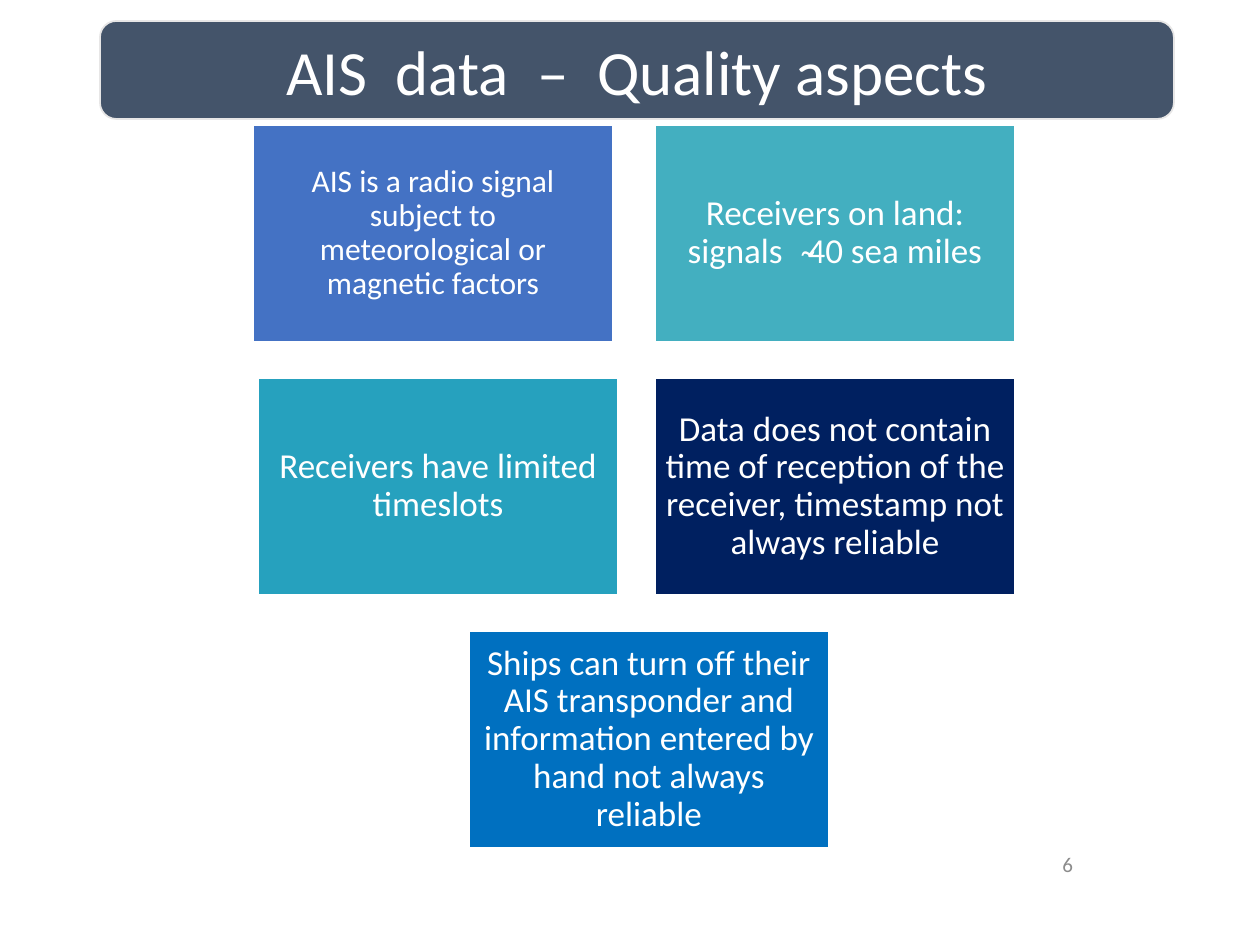
from pptx import Presentation, util as u
from pptx.dml.color import RGBColor
from pptx.enum import shapes, text

WHITE = RGBColor(0xFF, 0xFF, 0xFF)
GREY = RGBColor(0x8C, 0x8C, 0x8C)
SLATE = RGBColor(0x44, 0x54, 0x6A)
SILVER = RGBColor(0xE7, 0xE6, 0xE6)
BLUE = RGBColor(0x44, 0x72, 0xC4)
AQUA = RGBColor(0x43, 0xAF, 0xC0)
TEAL = RGBColor(0x26, 0xA1, 0xBE)
NAVY = RGBColor(0x00, 0x20, 0x60)
AZURE = RGBColor(0x00, 0x70, 0xC0)

SCALE = 914400 / 126
TILE_WIDTH, TILE_HEIGHT = 360, 217
TOP, ROW_STEP = 125, 253
ASPECTS = [
    (253, 0, BLUE, 18, 19, "AIS is a radio signal subject to meteorological or magnetic factors"),
    (655, 0, AQUA, 20, 10, "Receivers on land: signals   ̴40 sea miles"),
    (258, 1, TEAL, 20, 10, "Receivers have limited timeslots"),
    (655, 1, NAVY, 20, 10, "Data does not contain time of reception of the receiver, "
                           "timestamp not always reliable"),
    (469, 2, AZURE, 20, 10, "Ships can turn off their AIS transponder and information "
                            "entered by hand not always reliable"),
]


def px(length):
    return u.Emu(round(length * SCALE))


def assign(target, values):
    for name, value in values.items():
        setattr(target, name, value)


class QualitySlide:
    """Holds the text style and the slide that its elements are added to."""

    font = "Calibri"

    def __init__(self, deck):
        self.page = deck.slides.add_slide(deck.slide_layouts[6])

    def label(self, box, words, size, color, align, inset, spacing):
        frame = box.text_frame
        assign(frame, {"word_wrap": True, "vertical_anchor": text.MSO_ANCHOR.MIDDLE})
        assign(frame, {f"margin_{side}": px(inset) for side in ("left", "top", "right", "bottom")})
        para = frame.paragraphs[0]
        assign(para, {"alignment": align, "line_spacing": spacing})
        span = para.add_run()
        span.text = words
        assign(span.font, {"name": self.font, "size": u.Pt(size)})
        span.font.color.rgb = color

    def panel(self, kind, place, fill, line, weight, words, size, inset, spacing=1.0):
        box = self.page.shapes.add_shape(kind, *map(px, place))
        box.shadow.inherit = False
        box.fill.solid()
        box.fill.fore_color.rgb = fill
        box.line.color.rgb = line
        box.line.width = u.Pt(weight)
        self.label(box, words, size, WHITE, text.PP_ALIGN.CENTER, inset, spacing)

    def title(self, words):
        self.panel(shapes.MSO_SHAPE.ROUNDED_RECTANGLE, (100, 21, 1074, 98),
                   SLATE, SILVER, 1, words, 36, 19)

    def tile(self, left, row, fill, size, inset, words):
        place = (left, TOP + row * ROW_STEP, TILE_WIDTH, TILE_HEIGHT)
        self.panel(shapes.MSO_SHAPE.RECTANGLE, place, fill, WHITE, 1.5, words, size, inset, 0.9)

    def number(self, words):
        box = self.page.shapes.add_textbox(*map(px, (1007, 835, 78, 59)))
        self.label(box, words, 12, GREY, text.PP_ALIGN.RIGHT, 12, 1.0)


def main():
    deck = Presentation()
    assign(deck, {"slide_width": u.Inches(10), "slide_height": u.Inches(7.5)})
    slide = QualitySlide(deck)
    slide.number("6")
    for aspect in ASPECTS:
        slide.tile(*aspect)
    slide.title("AIS  data  –  Quality aspects")
    deck.save("out.pptx")


if __name__ == "__main__":
    main()
